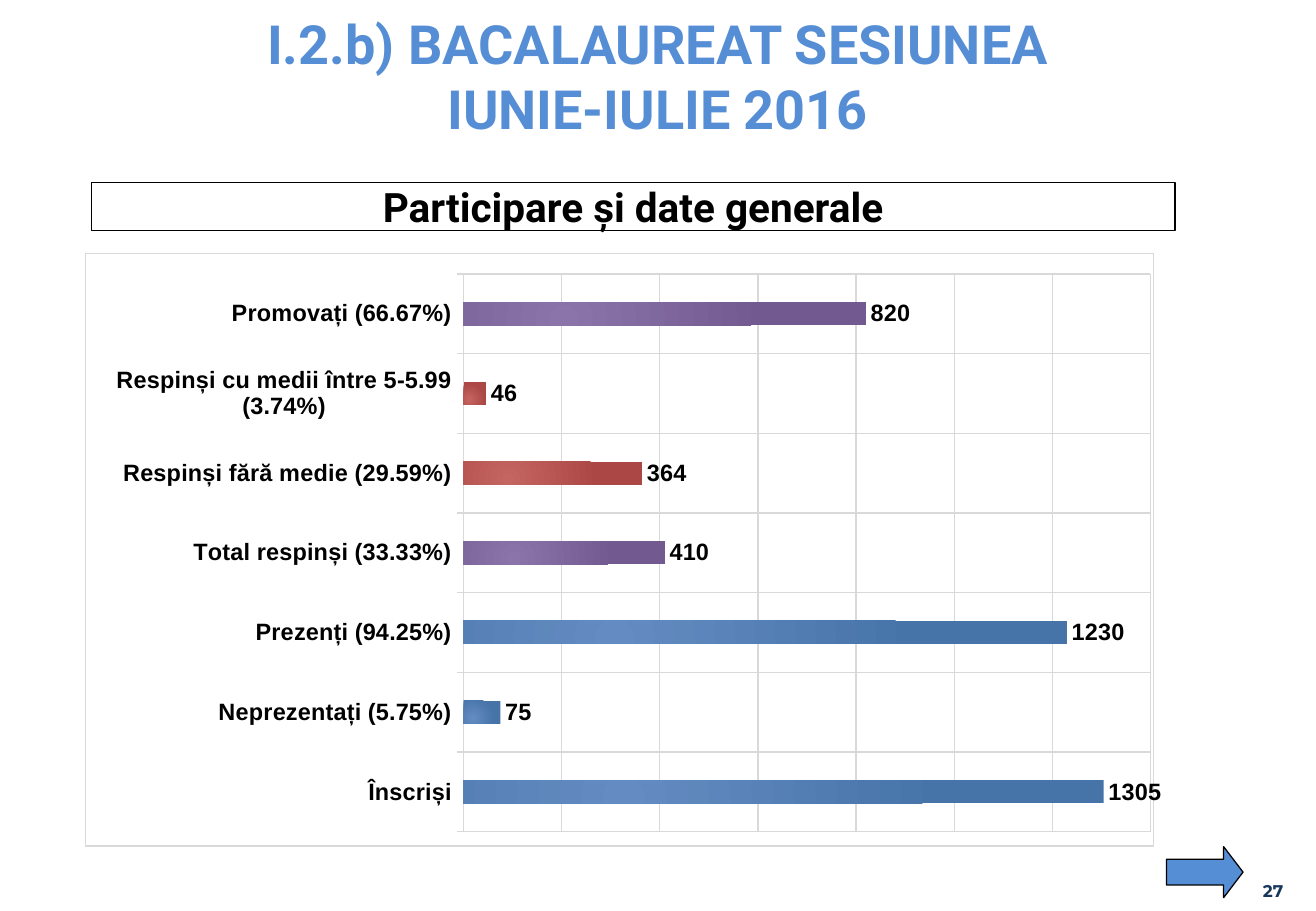
"""Build the slide on baccalaureate participation, June-July 2016."""
from dataclasses import dataclass

import pptx
import pptx.chart.data
import pptx.dml.color
import pptx.enum.chart
import pptx.enum.shapes
import pptx.enum.text
import pptx.oxml
import pptx.oxml.ns
import pptx.util
from pptx.util import Inches

RGB = pptx.dml.color.RGBColor.from_string
Pt = pptx.util.Pt
Align = pptx.enum.text.PP_ALIGN
Anchor = pptx.enum.text.MSO_ANCHOR
Preset = pptx.enum.shapes.MSO_SHAPE
qn = pptx.oxml.ns.qn
nsdecls = pptx.oxml.ns.nsdecls


@dataclass(frozen=True)
class Theme:
    accent: str = "558ED5"
    ink: str = "000000"
    number: str = "17365C"
    grid: str = "D9D9D9"
    blue: tuple = ("648CC2", "4673A8")
    purple: tuple = ("8B74A9", "725990")
    red: tuple = ("C56562", "AB4744")
    heading_font: str = "Roboto"
    chart_font: str = "Arial"
    number_font: str = "Montserrat"
    title_size: float = 32
    subtitle_size: float = 24
    label_size: float = 14
    chart_size: float = 12
    number_size: float = 10
    line_width: float = 0.75


theme = Theme()


def style_font(font, name, size, color):
    font.name, font.size, font.bold = name, Pt(size), True
    font.color.rgb = RGB(color)


def write_lines(frame, lines, align, name, size, color):
    frame.text = "\n".join(lines)
    for paragraph in frame.paragraphs:
        paragraph.alignment = align
        style_font(paragraph.font, name, size, color)


deck = pptx.Presentation()
deck.slide_width, deck.slide_height = Inches(10.83), Inches(7.5)
page = deck.slides.add_slide(deck.slide_layouts[6])

results = [
    ("Înscriși", 1305, theme.blue),
    ("Neprezentați (5.75%)", 75, theme.blue),
    ("Prezenți (94.25%)", 1230, theme.blue),
    ("Total respinși (33.33%)", 410, theme.purple),
    ("Respinși fără medie (29.59%)", 364, theme.red),
    ("Respinși cu medii între 5-5.99 (3.74%)", 46, theme.red),
    ("Promovați (66.67%)", 820, theme.purple),
]
data = pptx.chart.data.CategoryChartData()
data.categories = [name for name, count, colors in results]
data.add_series("Series 1", [count for name, count, colors in results])
chart = page.shapes.add_chart(
    pptx.enum.chart.XL_CHART_TYPE.BAR_CLUSTERED,
    Inches(0.7), Inches(2.08), Inches(8.86), Inches(4.89), data).chart
chart.has_legend = False
chart.has_title = False
style_font(chart.font, theme.chart_font, theme.chart_size, theme.ink)

categories = chart.category_axis
style_font(categories.tick_labels.font, theme.chart_font, theme.label_size, theme.ink)
categories.major_tick_mark = pptx.enum.chart.XL_TICK_MARK.OUTSIDE
categories.has_major_gridlines = True
values = chart.value_axis
values.has_major_gridlines = True
values.minimum_scale, values.maximum_scale, values.major_unit = 0, 1400, 200
values.visible = False
for line in (categories.format.line, categories.major_gridlines.format.line,
             values.major_gridlines.format.line):
    line.color.rgb = RGB(theme.grid)
    line.width = Pt(theme.line_width)

plot = chart.plots[0]
plot.gap_width = 247
plot.vary_by_categories = False
series = plot.series[0]
labels = series.data_labels
labels.show_value = True
labels.position = pptx.enum.chart.XL_LABEL_POSITION.OUTSIDE_END
style_font(labels.font, theme.chart_font, theme.label_size, theme.ink)
for index, (name, count, colors) in enumerate(results):
    fill = series.points[index].format.fill
    fill.gradient()
    for stop, position, color in zip(fill.gradient_stops, (0, 1), colors):
        stop.position = position
        stop.color.rgb = RGB(color)

chart_space = chart._chartSpace
for linear in list(chart_space.iter(qn("a:lin"))):
    linear.getparent().replace(linear, pptx.oxml.parse_xml(
        f'<a:path {nsdecls("a")} path="circle">'
        '<a:fillToRect l="50000" t="100000" r="100000" b="50000"/></a:path>'))

plot_area = chart_space.find(".//" + qn("c:plotArea"))
for layout in plot_area.findall(qn("c:layout")):
    plot_area.remove(layout)
plot_area.insert(0, pptx.oxml.parse_xml(
    f'<c:layout {nsdecls("c")}><c:manualLayout><c:layoutTarget val="inner"/>'
    '<c:xMode val="edge"/><c:yMode val="edge"/><c:x val="0.354"/><c:y val="0.035"/>'
    '<c:w val="0.643"/><c:h val="0.941"/></c:manualLayout></c:layout>'))
chart_space.find(qn("c:txPr")).addprevious(pptx.oxml.parse_xml(
    f'<c:spPr {nsdecls("c", "a")}><a:noFill/><a:ln w="{Pt(theme.line_width)}">'
    f'<a:solidFill><a:srgbClr val="{theme.grid}"/></a:solidFill></a:ln></c:spPr>'))

number = page.shapes.add_textbox(
    Inches(9.66), Inches(7.02), Inches(0.9), Inches(0.4)).text_frame
number.word_wrap = True
number.vertical_anchor = Anchor.BOTTOM
number.margin_left = number.margin_right = number.margin_top = number.margin_bottom = 0
write_lines(number, ["27"], Align.RIGHT,
            theme.number_font, theme.number_size, theme.number)

title = page.shapes.add_textbox(
    Inches(1.67), Inches(0.04), Inches(7.49), Inches(1.18)).text_frame
title.word_wrap = False
title.auto_size = pptx.enum.text.MSO_AUTO_SIZE.SHAPE_TO_FIT_TEXT
write_lines(title, ["I.2.b) BACALAUREAT SESIUNEA", "IUNIE-IULIE 2016"], Align.CENTER,
            theme.heading_font, theme.title_size, theme.accent)

banner = page.shapes.add_shape(
    Preset.RECTANGLE, Inches(0.75), Inches(1.5), Inches(8.92), Inches(0.4))
banner.fill.background()
subtitle = banner.text_frame
subtitle.word_wrap = True
subtitle.vertical_anchor = Anchor.MIDDLE
subtitle.margin_left = subtitle.margin_right = Inches(0.05)
subtitle.margin_top = subtitle.margin_bottom = Inches(0.05)
write_lines(subtitle, ["Participare și date generale"], Align.CENTER,
            theme.heading_font, theme.subtitle_size, theme.ink)

arrow = page.shapes.add_shape(
    Preset.RIGHT_ARROW, Inches(9.6), Inches(6.97), Inches(0.63), Inches(0.42))
arrow.adjustments[0], arrow.adjustments[1] = 0.5, 0.38
arrow.fill.solid()
arrow.fill.fore_color.rgb = RGB(theme.accent)
for shape in (banner, arrow):
    shape.shadow.inherit = False
    shape.line.color.rgb = RGB(theme.ink)
    shape.line.width = Pt(theme.line_width)

deck.save("out.pptx")
